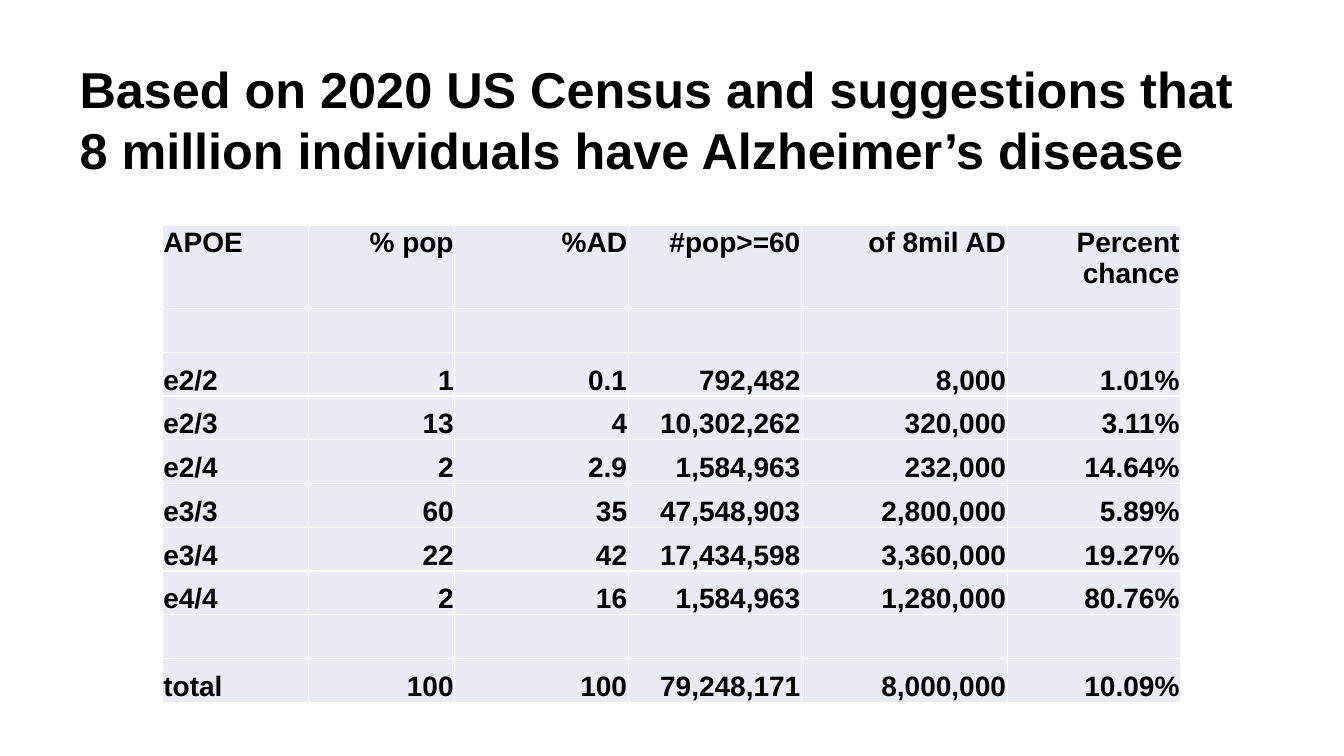
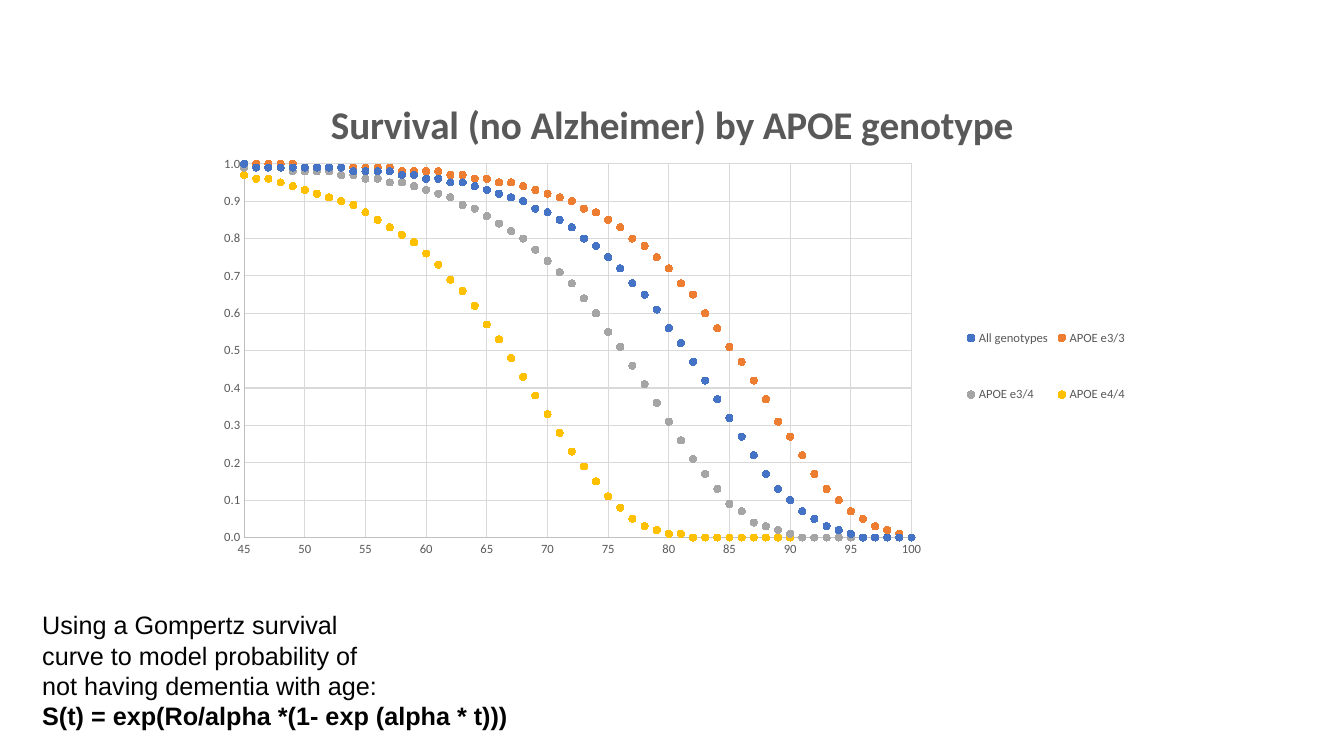
import math
import lxml.etree
import pptx
import pptx.chart.data
import pptx.dml.color
import pptx.enum.chart
import pptx.enum.text
import pptx.oxml.ns
import pptx.util

Inches = pptx.util.Inches
qn = pptx.oxml.ns.qn
align = pptx.enum.text.PP_ALIGN
anchor = pptx.enum.text.MSO_ANCHOR
tick = pptx.enum.chart.XL_TICK_MARK

hues = {
    "ink": "000000", "note": "020202", "cell": "E9EBF5", "rule": "FFFFFF",
    "label": "595959", "axis": "BFBFBF", "grid": "D9D9D9",
    "all": "4472C4", "e33": "ED7D31", "e34": "A5A5A5", "e44": "FFC000",
}
rgb = {name: pptx.dml.color.RGBColor.from_string(code) for name, code in hues.items()}


def style(font, hue, size, bold=False, face="Arial"):
    look = {"name": face, "size": pptx.util.Pt(size), "bold": bold}
    for key, value in look.items():
        setattr(font, key, value)
    font.color.rgb = rgb[hue]


def place(node, index, spots):
    for old in node.findall(qn("c:layout")):
        node.remove(old)
    layout = lxml.etree.Element(qn("c:layout"))
    manual = lxml.etree.SubElement(layout, qn("c:manualLayout"))
    for tag, value in spots.items():
        lxml.etree.SubElement(manual, qn("c:" + tag)).set("val", str(value))
    node.insert(index, layout)


deck = pptx.Presentation()
deck.slide_width = Inches(13.33)
deck.slide_height = Inches(7.5)
blank = deck.slide_layouts[6]

boxes = [
    {"at": (0.69, 0.53, 11.95, 1.31), "wrap": True, "size": 36, "hue": "ink", "lines": [
        ("Based on 2020 US Census and suggestions that "
         "8 million individuals have Alzheimer’s disease", True)]},
    {"at": (0.32, 6, 4.82, 1.6), "wrap": False, "size": 18, "hue": "note", "lines": [
        ("Using a Gompertz survival", False),
        ("curve to model probability of", False),
        ("not having dementia with age:", False),
        ("S(t) = exp(Ro/alpha *(1- exp (alpha * t)))", True)]},
]
slides = []
for box in boxes:
    slide = deck.slides.add_slide(blank)
    slides.append(slide)
    frame = slide.shapes.add_textbox(*map(Inches, box["at"])).text_frame
    frame.word_wrap = box["wrap"]
    frame.auto_size = pptx.enum.text.MSO_AUTO_SIZE.SHAPE_TO_FIT_TEXT
    for index, (words, bold) in enumerate(box["lines"]):
        para = frame.add_paragraph() if index else frame.paragraphs[0]
        run = para.add_run()
        run.text = words
        style(run.font, box["hue"], box["size"], bold)

people = 79248171
cases = 8000000
shares = [
    ("e2/2", 1, 0.1), ("e2/3", 13, 4), ("e2/4", 2, 2.9),
    ("e3/3", 60, 35), ("e3/4", 22, 42), ("e4/4", 2, 16), ("total", 100, 100),
]
heads = ("APOE", "% pop", "%AD", "#pop>=60", "of 8mil AD", "Percent chance")
gap = ("",) * len(heads)
rows = [heads, gap]
for gene, share, ill in shares:
    count = people * share / 100
    sick = cases * ill / 100
    if gene == "total":
        rows.append(gap)
    rows.append((gene, f"{share}", f"{ill}", f"{count:,.0f}", f"{sick:,.0f}",
                 f"{sick / count:.2%}"))

widths = [1.45, 1.45, 1.72, 1.72, 2.04, 1.72]
height = 4.73
first = 0.82
rest = (height - first) / (len(rows) - 1)
area = map(Inches, (1.61, 2.24, sum(widths), height))
table = slides[0].shapes.add_table(len(rows), len(widths), *area).table
table.first_row = False
table.horz_banding = False
for col, width in zip(table.columns, widths):
    col.width = Inches(width)
for r, words in enumerate(rows):
    table.rows[r].height = Inches(rest if r else first)
    for c, word in enumerate(words):
        cell = table.cell(r, c)
        form = {
            "margin_left": Inches(0.01), "margin_right": Inches(0.01),
            "margin_top": Inches(0.01), "margin_bottom": 0,
            "vertical_anchor": anchor.BOTTOM if r else anchor.TOP,
        }
        for key, value in form.items():
            setattr(cell, key, value)
        para = cell.text_frame.paragraphs[0]
        para.alignment = align.RIGHT if c else align.LEFT
        style(para.font, "ink", 20, True)
        if word:
            run = para.add_run()
            run.text = word
            style(run.font, "ink", 20, True)
        cell.fill.solid()
        cell.fill.fore_color.rgb = rgb["cell"]
        props = cell._tc.get_or_add_tcPr()
        for index, side in enumerate("LRTB"):
            line = lxml.etree.Element(qn("a:ln" + side), w="12700")
            fill = lxml.etree.SubElement(line, qn("a:solidFill"))
            lxml.etree.SubElement(fill, qn("a:srgbClr"), val=hues["rule"])
            props.insert(index, line)

low, high = 45, 100
double = 5
alpha = math.log(2) / double
curves = [
    ("All genotypes", "all", 81.32),
    ("APOE e3/3", "e33", 85.31),
    ("APOE e3/4", "e34", 76.15),
    ("APOE e4/4", "e44", 66.62),
]
data = pptx.chart.data.XyChartData()
for name, hue, median in curves:
    series = data.add_series(name)
    ratio = math.log(2) / (math.exp(alpha * median) - 1)
    for age in range(low - 1, high + 1):
        alive = math.exp(ratio * (1 - math.exp(alpha * age)))
        series.add_data_point(age, round(alive, 2))
kind = pptx.enum.chart.XL_CHART_TYPE.XY_SCATTER
area = map(Inches, (1.73, 0.75, 9.88, 5.15))
chart = slides[1].shapes.add_chart(kind, *area, data).chart
style(chart.font, "ink", 10, face="Calibri")

chart.has_title = True
title = chart.chart_title
run = title.text_frame.paragraphs[0].add_run()
run.text = "Survival (no Alzheimer) by APOE genotype"
style(run.font, "label", 28, True, "Calibri")
title.include_in_layout = False

chart.has_legend = True
legend = chart.legend
legend.position = pptx.enum.chart.XL_LEGEND_POSITION.RIGHT
legend.include_in_layout = False
style(legend.font, "label", 9, face="Calibri")

edge = {"xMode": "edge", "yMode": "edge"}
place(title._element, 1, {**edge, "x": 0.15, "y": 0.03})
place(legend._element, 1, {**edge, "x": 0.79, "y": 0.41, "w": 0.17, "h": 0.3})
place(chart._chartSpace.chart.plotArea, 0, {
    "layoutTarget": "inner", **edge, "x": 0.07, "y": 0.17, "w": 0.67, "h": 0.72})

plot = chart.plots[0]
plot.vary_by_categories = False
for series, (name, hue, median) in zip(plot.series, curves):
    series.format.line.fill.background()
    series.smooth = False
    dot = series.marker
    dot.style = pptx.enum.chart.XL_MARKER_STYLE.CIRCLE
    dot.size = 5
    dot.format.fill.solid()
    dot.format.fill.fore_color.rgb = rgb[hue]
    dot.format.line.color.rgb = rgb[hue]

axes = [
    (chart.category_axis, low, high, 5, "General"),
    (chart.value_axis, 0, 1, 0.1, "0.0"),
]
for axis, start, end, step, digits in axes:
    form = {
        "minimum_scale": start, "maximum_scale": end, "major_unit": step,
        "major_tick_mark": tick.NONE, "minor_tick_mark": tick.NONE,
        "has_major_gridlines": True, "has_minor_gridlines": False,
    }
    for key, value in form.items():
        setattr(axis, key, value)
    axis.tick_labels.number_format = digits
    axis.tick_labels.number_format_is_linked = False
    style(axis.tick_labels.font, "label", 9, face="Calibri")
    for part, hue in ((axis, "axis"), (axis.major_gridlines, "grid")):
        part.format.line.color.rgb = rgb[hue]
        part.format.line.width = pptx.util.Pt(0.75)

deck.save("out.pptx")
